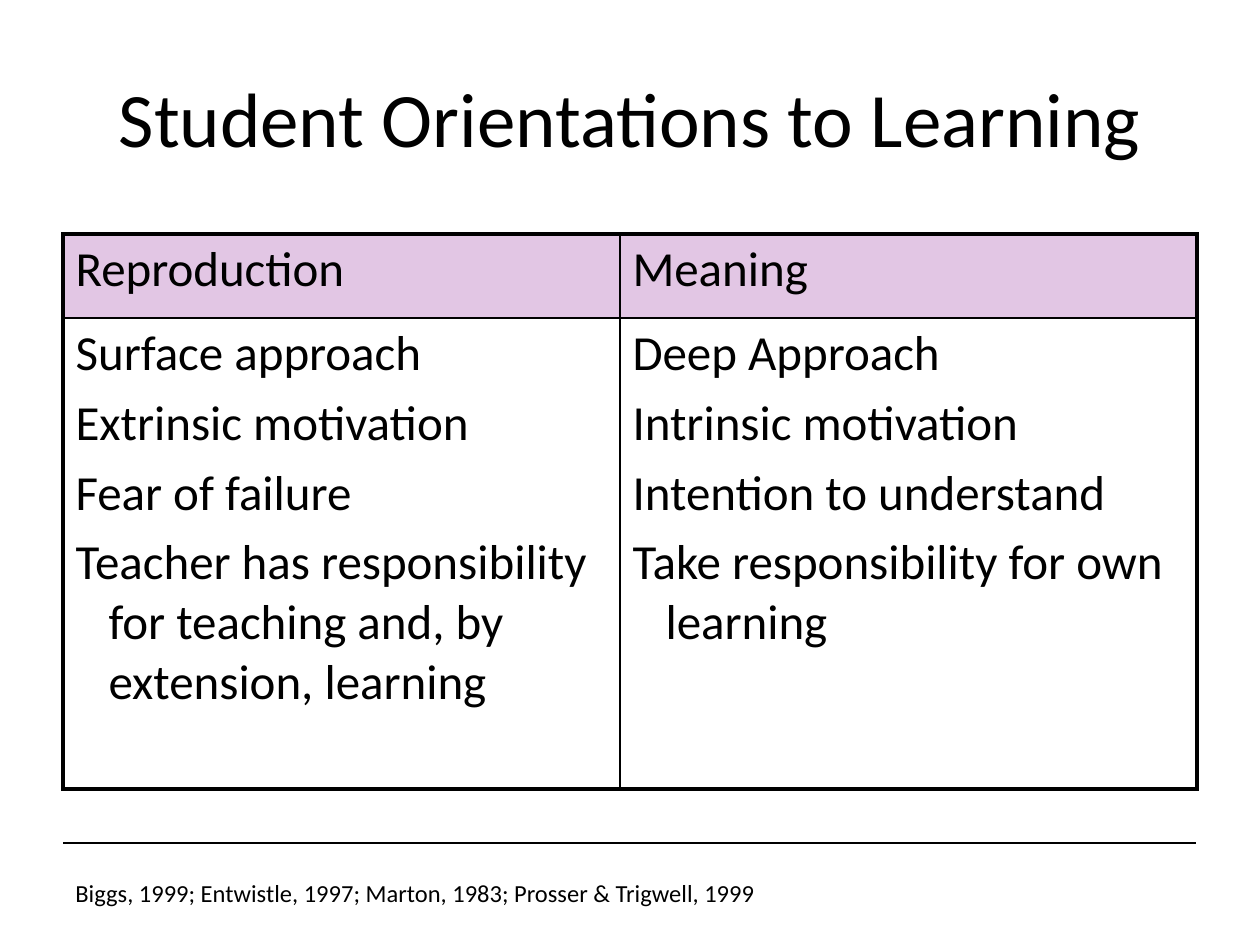
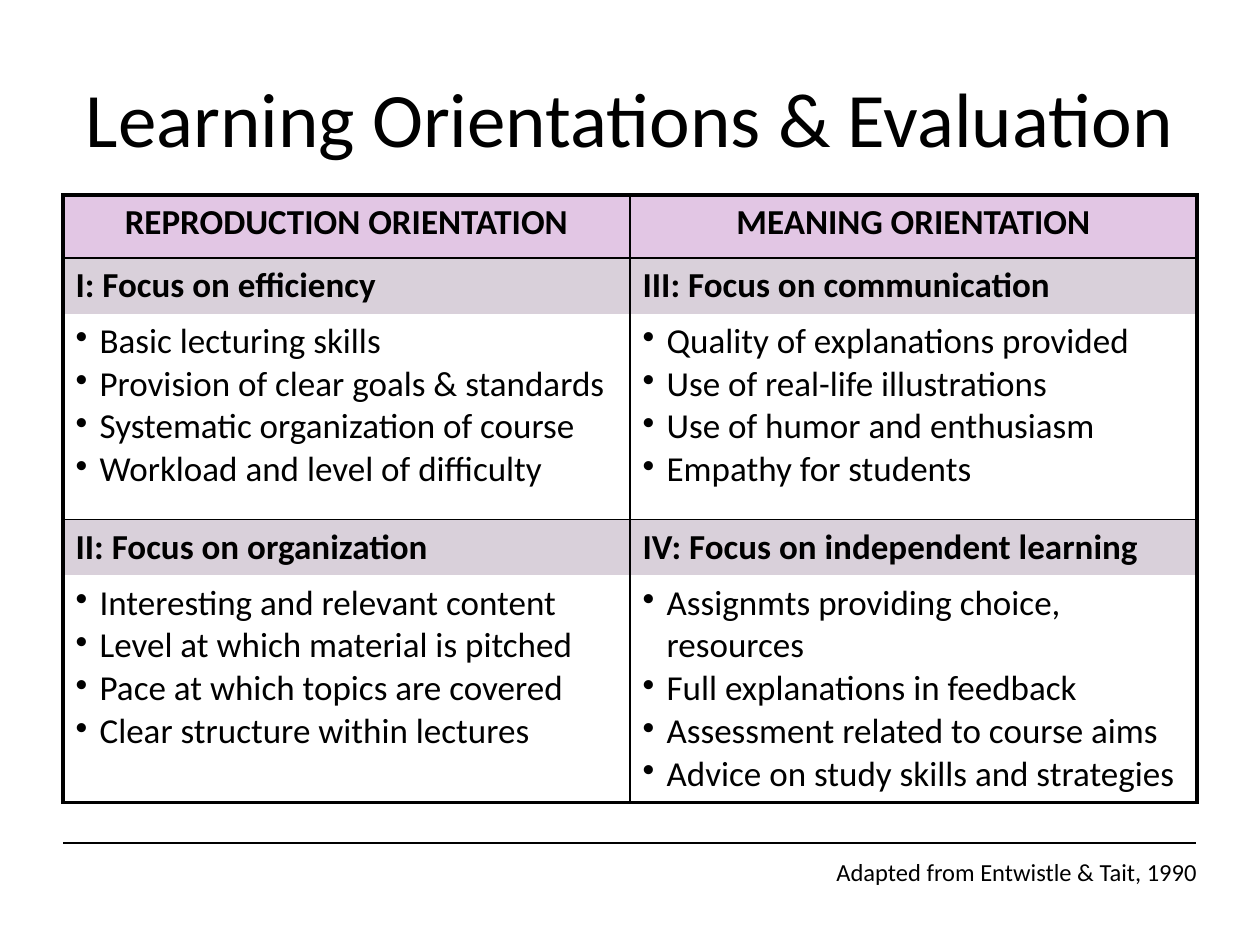
from dataclasses import dataclass

from lxml import etree
from pptx import Presentation
from pptx import util as u
from pptx.dml.color import RGBColor
from pptx.enum import shapes, text
from pptx.oxml import ns

PX = 914400 / 126  # EMU in one px


@dataclass(frozen=True)
class Theme:
    font: str = "Calibri"
    ink: str = "000000"
    header_fill: str = "E2C6E4"
    heading_fill: str = "D9D0DA"
    title_size: int = 44
    note_size: int = 14
    rule: float = 0.75
    outer_border: float = 2.25
    inner_border: float = 1


THEME = Theme()
LEFT, RIGHT, RULE_TOP = 63, 1196, 843
TITLE_BOX = (63, 38, 1134, 158)

# How the paragraphs and the cell of each kind of row look
ROW_STYLES = {
    "header": dict(fill=THEME.header_fill),
    "caption": dict(fill=THEME.header_fill, bold=True, align=text.PP_ALIGN.CENTER),
    "heading": dict(fill=THEME.heading_fill, bold=True),
    "hanging": dict(indent=33, gap=5.6),
    "bullets": dict(indent=24, bullet="•"),
}

# Each row: kind, height, lines of the left cell, lines of the right cell
SLIDES = [
    dict(
        title="Student Orientations to Learning",
        table_top=234, columns=(557, 577), size=28,
        rows=[
            ("header", 84, ["Reproduction"], ["Meaning"]),
            ("hanging", 471,
             ["Surface approach", "Extrinsic motivation", "Fear of failure",
              "Teacher has responsibility for teaching and, by extension, learning"],
             ["Deep Approach", "Intrinsic motivation", "Intention to understand",
              "Take responsibility for own learning"]),
        ],
        note="Biggs, 1999; Entwistle, 1997; Marton, 1983; Prosser & Trigwell, 1999",
        note_box=(63, 872, 714, 42),
    ),
    dict(
        title="Learning Orientations & Evaluation",
        table_top=195, columns=(567, 567), size=20,
        rows=[
            ("caption", 63, ["REPRODUCTION ORIENTATION"], ["MEANING ORIENTATION"]),
            ("heading", 55, ["I: Focus on efficiency"], ["III: Focus on communication"]),
            ("bullets", 206,
             ["Basic lecturing skills", "Provision of clear goals & standards",
              "Systematic organization of course", "Workload and level of difficulty"],
             ["Quality of explanations provided", "Use of real-life illustrations",
              "Use of humor and enthusiasm", "Empathy for students"]),
            ("heading", 56, ["II: Focus on organization"],
             ["IV: Focus on independent learning"]),
            ("bullets", 227,
             ["Interesting and relevant content", "Level at which material is pitched",
              "Pace at which topics are covered", "Clear structure within lectures"],
             ["Assignmts providing choice, resources", "Full explanations in feedback",
              "Assessment related to course aims",
              "Advice on study skills and strategies"]),
        ],
        note="Adapted from Entwistle & Tait, 1990",
        note_box=(824, 851, 405, 42),
    ),
]


def px(length):
    return u.Emu(round(length * PX))


def color(value):
    return RGBColor.from_string(value)


def write(frame, lines, size, bold=False, align=text.PP_ALIGN.LEFT,
          indent=0, bullet=None, gap=0):
    """Fill a text frame with one paragraph a line; indent is hanging, in px."""
    frame.word_wrap = True
    for index, line in enumerate(lines):
        paragraph = frame.paragraphs[0] if index == 0 else frame.add_paragraph()
        if indent:
            properties = paragraph._p.get_or_add_pPr()
            properties.set("marL", str(px(indent)))
            properties.set("indent", str(px(-indent)))
            if bullet:
                mark = etree.SubElement(properties, ns.qn("a:buChar"))
                mark.set("char", bullet)
        paragraph.alignment = align
        paragraph.space_before = u.Pt(gap if index else 0)
        run = paragraph.add_run()
        run.text = line
        run.font.name = THEME.font
        run.font.size = u.Pt(size)
        run.font.bold = bold
        run.font.color.rgb = color(THEME.ink)


def set_borders(cell, widths):
    """Set left, right, top and bottom border widths in points; 0 hides one."""
    properties = cell._tc.get_or_add_tcPr()
    for index, (side, width) in enumerate(zip("LRTB", widths)):
        line = etree.Element(ns.qn(f"a:ln{side}"), w=str(u.Pt(width)))
        if width:
            fill = etree.SubElement(line, ns.qn("a:solidFill"))
            etree.SubElement(fill, ns.qn("a:srgbClr"), val=THEME.ink)
        else:
            etree.SubElement(line, ns.qn("a:noFill"))
        properties.insert(index, line)


def row_edges(kinds):
    """Widths of the horizontal borders: none between a heading and its bullets."""
    inner = [0 if kind == "heading" else THEME.inner_border for kind in kinds[:-1]]
    return [THEME.outer_border, *inner, THEME.outer_border]


def add_table(slide, top, columns, size, rows):
    kinds = [row[0] for row in rows]
    heights = [row[1] for row in rows]
    frame = slide.shapes.add_table(len(rows), len(columns), px(LEFT), px(top),
                                   px(sum(columns)), px(sum(heights)))
    table = frame.table
    table.first_row = table.horz_banding = False
    for column, width in zip(table.columns, columns):
        column.width = px(width)
    across = [THEME.outer_border, THEME.inner_border, THEME.outer_border]
    down = row_edges(kinds)
    for r, (kind, height, *cells) in enumerate(rows):
        table.rows[r].height = px(height)
        style = dict(ROW_STYLES[kind])
        fill = style.pop("fill", None)
        for c, lines in enumerate(cells):
            cell = table.cell(r, c)
            write(cell.text_frame, lines, size, **style)
            if fill:
                cell.fill.solid()
                cell.fill.fore_color.rgb = color(fill)
            else:
                cell.fill.background()
            set_borders(cell, (*across[c:c + 2], *down[r:r + 2]))


def add_rule(slide):
    rule = slide.shapes.add_connector(shapes.MSO_CONNECTOR.STRAIGHT, px(LEFT),
                                      px(RULE_TOP), px(RIGHT), px(RULE_TOP))
    rule.line.color.rgb = color(THEME.ink)
    rule.line.width = u.Pt(THEME.rule)
    etree.SubElement(rule._element.spPr, ns.qn("a:effectLst"))


def add_title(slide, title):
    shape = slide.shapes.title
    shape.left, shape.top, shape.width, shape.height = map(px, TITLE_BOX)
    shape.text_frame.vertical_anchor = text.MSO_ANCHOR.MIDDLE
    write(shape.text_frame, [title], THEME.title_size, align=text.PP_ALIGN.CENTER)


def add_note(slide, note, box):
    shape = slide.shapes.add_textbox(*map(px, box))
    write(shape.text_frame, [note], THEME.note_size)


def main():
    presentation = Presentation()
    presentation.slide_width, presentation.slide_height = px(1260), px(945)
    title_only = presentation.slide_layouts.get_by_name("Title Only")
    for content in SLIDES:
        slide = presentation.slides.add_slide(title_only)
        add_rule(slide)
        add_title(slide, content["title"])
        add_table(slide, content["table_top"], content["columns"],
                  content["size"], content["rows"])
        add_note(slide, content["note"], content["note_box"])
    presentation.save("out.pptx")


if __name__ == "__main__":
    main()
